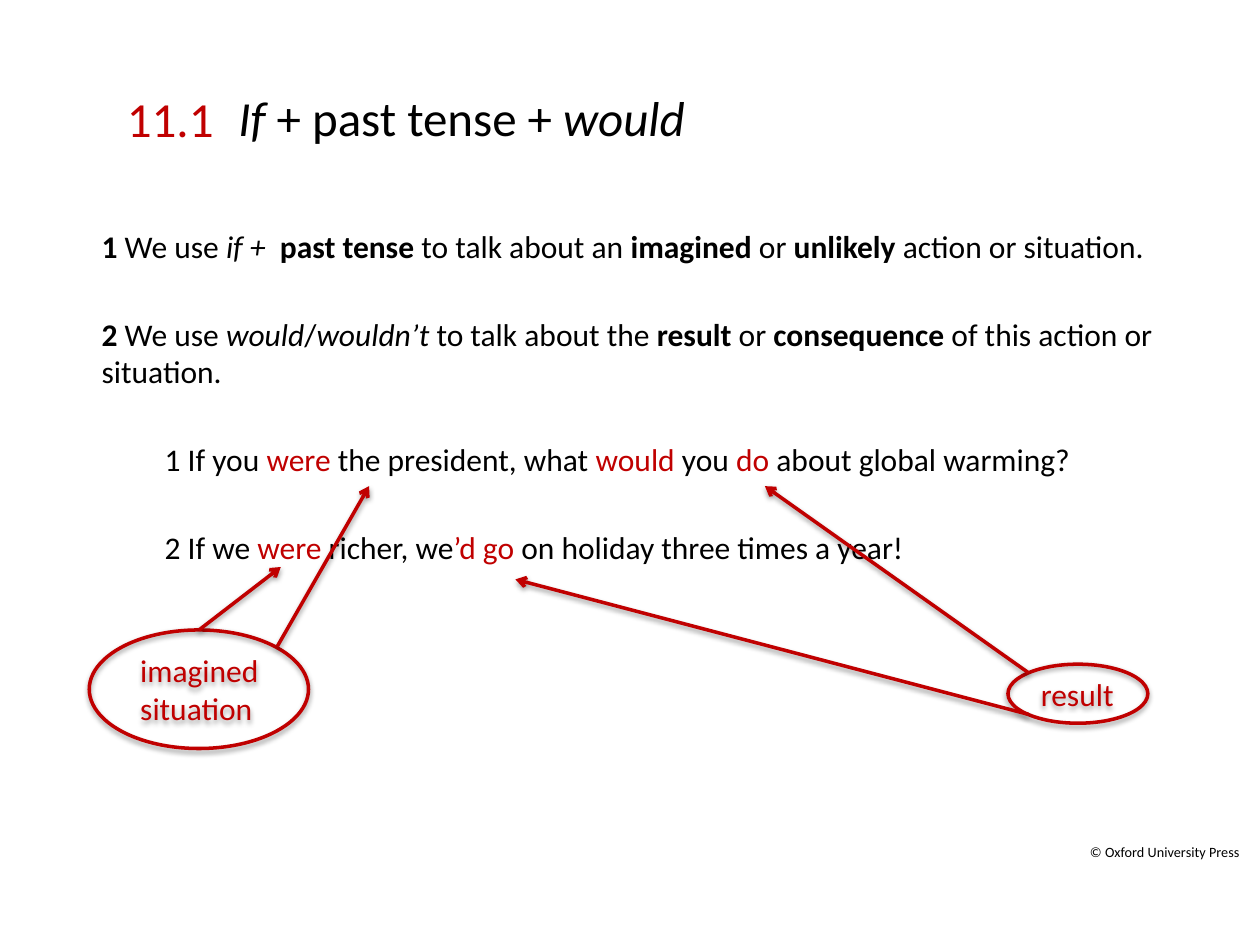
from dataclasses import dataclass

from lxml import etree
from pptx import Presentation
from pptx.dml.color import RGBColor
from pptx.enum import shapes, text
from pptx.oxml import ns
from pptx.util import Cm, Pt

FONT = "Calibri"
COLORS = {"text": "000000", "accent": "C00000", "shadow": "000000"}


@dataclass
class Run:
    text: str
    bold: bool = False
    italic: bool = False
    color: str = "text"


@dataclass
class Line:
    runs: list[Run]
    indent: float = 0


@dataclass
class Arrow:
    start: tuple[float, float]
    end: tuple[float, float]
    from_top: bool = False


@dataclass
class Callout:
    label: str
    box: tuple[float, float, float, float]
    left_inset: float
    arrows: list[Arrow]


def bold(words: str) -> Run:
    return Run(words, bold=True)


def italic(words: str) -> Run:
    return Run(words, italic=True)


def accent(words: str) -> Run:
    return Run(words, color="accent")


def rgb(name: str) -> RGBColor:
    return RGBColor.from_string(COLORS[name])


def add_runs(paragraph, runs: list[Run], size: float) -> None:
    for item in runs:
        run = paragraph.add_run()
        run.text = item.text
        run.font.name = FONT
        run.font.size = Pt(size)
        run.font.bold = item.bold
        run.font.italic = item.italic
        run.font.color.rgb = rgb(item.color)


def add_text(slide, box: tuple, lines: list[Line], size: float, wrap: bool = True):
    shape = slide.shapes.add_textbox(*map(Cm, box))
    frame = shape.text_frame
    frame.word_wrap = wrap
    for index, line in enumerate(lines):
        paragraph = frame.add_paragraph() if index else frame.paragraphs[0]
        if index:
            paragraph.space_before = Pt(28.5)
        if line.indent:
            paragraph._p.get_or_add_pPr().set("marL", str(Cm(line.indent)))
        add_runs(paragraph, line.runs, size)
    return shape


def style_outline(shape) -> None:
    """Give a shape or connector the red line and soft shadow."""
    shape.line.color.rgb = rgb("accent")
    shape.line.width = Pt(2)
    properties = shape._element.spPr
    effects = etree.SubElement(properties, ns.qn("a:effectLst"))
    shadow = etree.SubElement(
        effects, ns.qn("a:outerShdw"), blurRad=str(Pt(3.1)), dist=str(Pt(1.6)),
        dir="5400000", rotWithShape="0")
    color = etree.SubElement(shadow, ns.qn("a:srgbClr"), val=COLORS["shadow"])
    etree.SubElement(color, ns.qn("a:alpha"), val="38000")


def add_arrow(slide, arrow: Arrow, source) -> None:
    connector = slide.shapes.add_connector(
        shapes.MSO_CONNECTOR.STRAIGHT, *map(Cm, arrow.start + arrow.end))
    if arrow.from_top:
        connector.begin_connect(source, 0)
    style_outline(connector)
    etree.SubElement(connector.line._get_or_add_ln(), ns.qn("a:tailEnd"), type="arrow")


def add_callout(slide, callout: Callout) -> None:
    ellipse = slide.shapes.add_shape(shapes.MSO_SHAPE.OVAL, *map(Cm, callout.box))
    ellipse.fill.background()
    style_outline(ellipse)
    frame = ellipse.text_frame
    frame.word_wrap = True
    frame.margin_left = Cm(callout.left_inset)
    frame.margin_right = Cm(0.1)
    frame.vertical_anchor = text.MSO_ANCHOR.MIDDLE
    paragraph = frame.paragraphs[0]
    paragraph.alignment = text.PP_ALIGN.LEFT
    add_runs(paragraph, [accent(callout.label)], 18)
    for arrow in callout.arrows:
        add_arrow(slide, arrow, ellipse)


RULES = [
    Line([bold("1"), Run(" We use "), italic("if +  "), bold("past tense "),
          Run("to talk about an "), bold("imagined"), Run(" or "),
          bold("unlikely"), Run(" action or situation.")]),
    Line([bold("2"), Run(" We use "), italic("would"), Run("/"), italic("wouldn’t"),
          Run(" to talk about the "), bold("result"), Run(" or "),
          bold("consequence"), Run(" of this action or situation.")]),
    Line([Run("1 If you "), accent("were "), Run("the president, what "),
          accent("would"), Run(" you "), accent("do"),
          Run(" about global warming?")], indent=1.27),
    Line([Run("2 If we "), accent("were "), Run("richer, we"), accent("’d go "),
          Run("on holiday three times a year!")], indent=1.27),
]

CALLOUTS = [
    Callout("imagined situation", (1.8, 12.7, 4.42, 2.39), 0.38, [
        Arrow((5.59, 13.03), (7.44, 9.8)),
        Arrow((4.01, 12.7), (5.66, 11.43), from_top=True)]),
    Callout("result", (20.32, 13.39, 2.82, 1.19), 0.25, [
        Arrow((20.73, 13.56), (15.42, 9.8)),
        Arrow((20.73, 14.4), (10.39, 11.68))]),
]


def main() -> None:
    presentation = Presentation()
    presentation.slide_width, presentation.slide_height = Cm(25.4), Cm(19.05)
    slide = presentation.slides.add_slide(presentation.slide_layouts[5])

    # Copyright line
    footer = add_text(slide, (21.23, 16.81, 4.01, 0.66),
                      [Line([Run("© Oxford University Press")])], 14, wrap=False)
    paragraph = footer.text_frame.paragraphs[0]
    paragraph.alignment = text.PP_ALIGN.RIGHT
    paragraph.runs[0].font._element.set("baseline", "30000")

    # Title and unit number
    title = slide.shapes.title
    title.left, title.top, title.width, title.height = map(Cm, (4.55, 0.76, 11.84, 3.18))
    title.text_frame.vertical_anchor = text.MSO_ANCHOR.MIDDLE
    heading = title.text_frame.paragraphs[0]
    heading.alignment = text.PP_ALIGN.LEFT
    add_runs(heading, [italic("If"), Run(" + past tense + "), italic("would")], 28)
    add_text(slide, (2.31, 1.65, 2.29, 1.45), [Line([accent("11.1")])], 28, wrap=False)

    # Grammar rules and examples
    add_text(slide, (1.8, 4.45, 22.33, 11.51), RULES, 18)

    # Callouts pointing at the examples
    for callout in CALLOUTS:
        add_callout(slide, callout)

    presentation.save("out.pptx")


if __name__ == "__main__":
    main()
